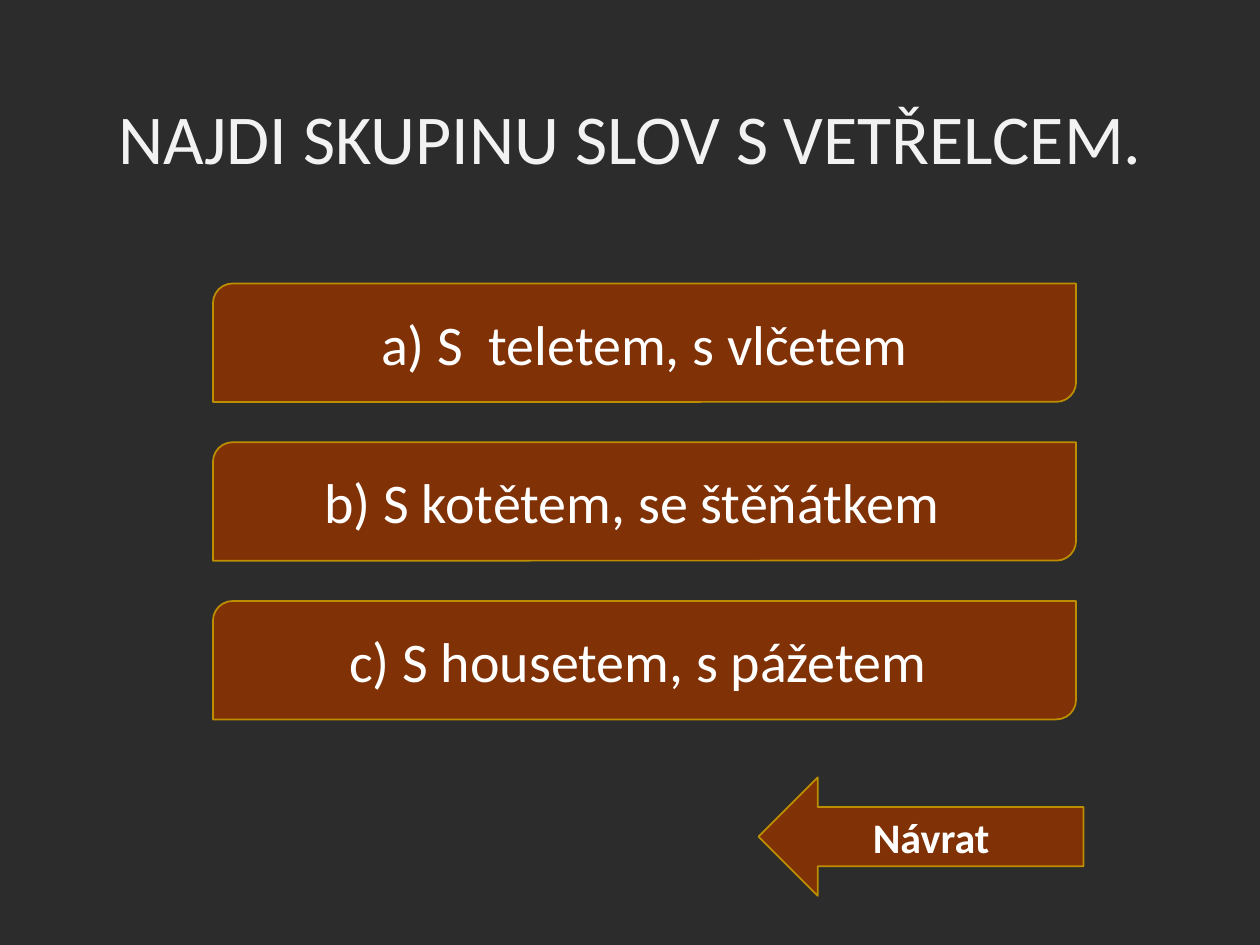
from pptx import Presentation
from pptx import util as u
from pptx.dml import color
from pptx.enum import shapes, text

COLORS = {
    "background": "2C2C2C",
    "heading": "F2F2F2",
    "button": "803106",
    "outline": "BD8E00",
    "label": "FFFFFF",
}
HEADING_FONT = {"name": "Calibri", "size": u.Pt(40), "bold": False}
ANSWER_FONT = {"name": "Calibri", "size": u.Pt(32), "bold": False}
RETURN_FONT = {"name": "Calibri", "size": u.Pt(24), "bold": True}
ANSWERS = [
    "a) S  teletem, s vlčetem",
    "b) S kotětem, se štěňátkem  ",
    "c) S housetem, s pážetem ",
]
ANSWER_STEP = 1.26


def rgb(key):
    return color.RGBColor.from_string(COLORS[key])


def write(holder, wording, font_format, color_key):
    frame = holder.text_frame
    frame.word_wrap = True
    frame.vertical_anchor = text.MSO_ANCHOR.MIDDLE
    line = frame.paragraphs[0]
    line.alignment = text.PP_ALIGN.CENTER
    run = line.add_run()
    run.text = wording
    for key, value in font_format.items():
        setattr(run.font, key, value)
    run.font.color.rgb = rgb(color_key)


def place_heading(slide, box, wording):
    heading = slide.shapes.title
    for side, length in zip(("left", "top", "width", "height"), box):
        setattr(heading, side, u.Inches(length))
    write(heading, wording, HEADING_FONT, "heading")
    heading.text_frame.auto_size = text.MSO_AUTO_SIZE.NONE
    heading.text_frame.paragraphs[0].line_spacing = 0.85


def place_button(slide, box, outline, wording, font_format):
    button = slide.shapes.add_shape(outline, *map(u.Inches, box))
    button.shadow.inherit = False
    button.fill.solid()
    button.fill.fore_color.rgb = rgb("button")
    button.line.color.rgb = rgb("outline")
    button.line.width = u.Pt(1)
    write(button, wording, font_format, "label")


def place_answers(slide, box):
    left, top, width, height = box
    for row, answer in enumerate(ANSWERS):
        place_button(slide, (left, top + row * ANSWER_STEP, width, height),
                     shapes.MSO_SHAPE.ROUND_2_DIAG_RECTANGLE, answer, ANSWER_FONT)


def main():
    quiz = Presentation()
    quiz.slide_width, quiz.slide_height = u.Inches(10), u.Inches(7.5)
    slide = quiz.slides.add_slide(quiz.slide_layouts[5])
    slide.background.fill.solid()
    slide.background.fill.fore_color.rgb = rgb("background")
    place_heading(slide, (0.75, 0.31, 8.5, 1.65), "NAJDI SKUPINU SLOV S VETŘELCEM.")
    place_answers(slide, (1.69, 2.25, 6.85, 0.94))
    place_button(slide, (6.02, 6.17, 2.58, 0.94),
                 shapes.MSO_SHAPE.LEFT_ARROW, "Návrat ", RETURN_FONT)
    quiz.save("out.pptx")


if __name__ == "__main__":
    main()
